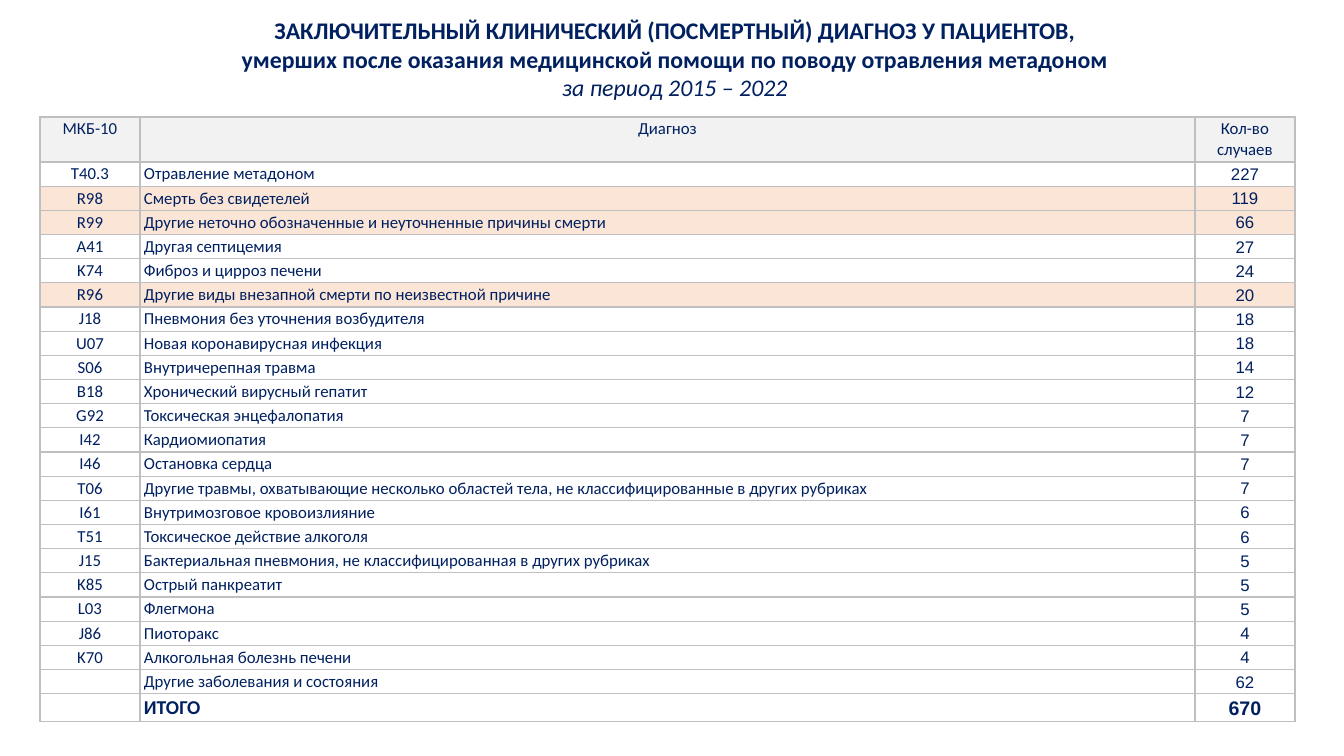
from lxml import etree
from pptx import Presentation
from pptx.dml.color import RGBColor
from pptx.enum.text import MSO_ANCHOR, MSO_AUTO_SIZE, PP_ALIGN
from pptx.oxml.ns import qn
from pptx.util import Pt

EMU_PER_PX = 914400 / 100.8
CENTER, LEFT = PP_ALIGN.CENTER, PP_ALIGN.LEFT
TOP, BOTTOM = MSO_ANCHOR.TOP, MSO_ANCHOR.BOTTOM
GROW = MSO_AUTO_SIZE.SHAPE_TO_FIT_TEXT
TITLE_ONLY_LAYOUT = 5

COLORS = {
    "navy": "002060",
    "border": "BFBFBF",
    "header": "F2F2F2",
    "plain": "FFFFFF",
    "unclear_cause": "FBE5D6",
}

TITLE_LINES = [
    ("ЗАКЛЮЧИТЕЛЬНЫЙ КЛИНИЧЕСКИЙ (ПОСМЕРТНЫЙ) ДИАГНОЗ У ПАЦИЕНТОВ,", True, False),
    ("умерших после оказания медицинской помощи по поводу отравления метадоном", True, False),
    ("за период 2015 – 2022", False, True),
]
HEADER = ("МКБ-10", "Диагноз", "Кол-во\nслучаев")
DIAGNOSES = [
    ("T40.3", "Отравление метадоном", 227),
    ("R98", "Смерть без свидетелей", 119),
    ("R99", "Другие неточно обозначенные и неуточненные причины смерти", 66),
    ("A41", "Другая септицемия", 27),
    ("K74", "Фиброз и цирроз печени", 24),
    ("R96", "Другие виды внезапной смерти по неизвестной причине", 20),
    ("J18", "Пневмония без уточнения возбудителя", 18),
    ("U07", "Новая коронавирусная инфекция", 18),
    ("S06", "Внутричерепная травма", 14),
    ("B18", "Хронический вирусный гепатит", 12),
    ("G92", "Токсическая энцефалопатия", 7),
    ("I42", "Кардиомиопатия", 7),
    ("I46", "Остановка сердца", 7),
    ("T06", "Другие травмы, охватывающие несколько областей тела, "
            "не классифицированные в других рубриках", 7),
    ("I61", "Внутримозговое кровоизлияние", 6),
    ("T51", "Токсическое действие алкоголя", 6),
    ("J15", "Бактериальная пневмония, не классифицированная в других рубриках", 5),
    ("K85", "Острый панкреатит", 5),
    ("L03", "Флегмона", 5),
    ("J86", "Пиоторакс", 4),
    ("K70", "Алкогольная болезнь печени", 4),
    ("", "Другие заболевания и состояния", 62),
]
TOTAL = ("", "ИТОГО", 670)
HEADER_HEIGHT, ROW_HEIGHT, TOTAL_HEIGHT = 45, 24, 28
CODE_WIDTH = COUNT_WIDTH = 100


def px(length):
    return round(length * EMU_PER_PX)


def rgb(name):
    return RGBColor.from_string(COLORS[name])


def add_run(paragraph, text, size, font="Calibri", bold=False, italic=False):
    run = paragraph.add_run()
    run.text = text
    run.font.size = Pt(size)
    run.font.name = font
    run.font.bold = bold
    run.font.italic = italic
    run.font.color.rgb = rgb("navy")


def add_title(slide, left, top, width, height):
    title = slide.shapes.title
    title.left, title.top, title.width, title.height = map(px, (left, top, width, height))
    frame = title.text_frame
    frame.word_wrap = True
    frame.auto_size = GROW
    frame.vertical_anchor = TOP
    for index, (line, bold, italic) in enumerate(TITLE_LINES):
        paragraph = frame.add_paragraph() if index else frame.paragraphs[0]
        paragraph.alignment = CENTER
        add_run(paragraph, line, 17, bold=bold, italic=italic)


def add_borders(cell):
    properties = cell._tc.get_or_add_tcPr()
    for side in ("lnL", "lnR", "lnT", "lnB"):
        line = etree.SubElement(properties, qn(f"a:{side}"), w=str(Pt(1)))
        fill = etree.SubElement(line, qn("a:solidFill"))
        etree.SubElement(fill, qn("a:srgbClr"), val=COLORS["border"])


def fill_cell(cell, text, fill, anchor, alignment, size, font, bold):
    add_borders(cell)
    cell.fill.solid()
    cell.fill.fore_color.rgb = rgb(fill)
    cell.vertical_anchor = anchor
    cell.margin_left = cell.margin_right = px(4)
    cell.margin_top = cell.margin_bottom = px(2)
    frame = cell.text_frame
    for index, line in enumerate(text.split("\n")):
        paragraph = frame.add_paragraph() if index else frame.paragraphs[0]
        paragraph.alignment = alignment
        if line:
            add_run(paragraph, line, size, font, bold)
        else:  # keeps an empty cell from stretching its row
            etree.SubElement(paragraph._p, qn("a:endParaRPr"), sz=str(size * 100))


def add_diagnosis_table(slide, left, top, width):
    records = [HEADER, *DIAGNOSES, TOTAL]
    heights = [HEADER_HEIGHT, *[ROW_HEIGHT] * len(DIAGNOSES), TOTAL_HEIGHT]
    widths = [CODE_WIDTH, width - CODE_WIDTH - COUNT_WIDTH, COUNT_WIDTH]
    table = slide.shapes.add_table(
        len(records), len(widths), px(left), px(top), px(width), px(sum(heights))
    ).table
    table.first_row = table.horz_banding = False
    for column, column_width in zip(table.columns, widths):
        column.width = px(column_width)
    for row, record, height in zip(table.rows, records, heights):
        row.height = px(height)
        is_header, is_total = record is HEADER, record is TOTAL
        if is_header:
            fill = "header"
        else:
            fill = "unclear_cause" if record[0].startswith("R9") else "plain"
        for index, (cell, value) in enumerate(zip(row.cells, record)):
            fill_cell(
                cell, str(value), fill,
                anchor=TOP if is_header else BOTTOM,
                alignment=LEFT if index == 1 and not is_header else CENTER,
                size=14 if is_total else 12,
                font="Arial" if index == 2 and not is_header else "Calibri",
                bold=is_total,
            )


def main():
    presentation = Presentation()
    presentation.slide_width, presentation.slide_height = px(1344), px(756)
    slide = presentation.slides.add_slide(presentation.slide_layouts[TITLE_ONLY_LAYOUT])
    add_title(slide, 67, 11, 1216, 97)
    add_diagnosis_table(slide, 40, 117, 1255)
    presentation.save("out.pptx")


if __name__ == "__main__":
    main()
